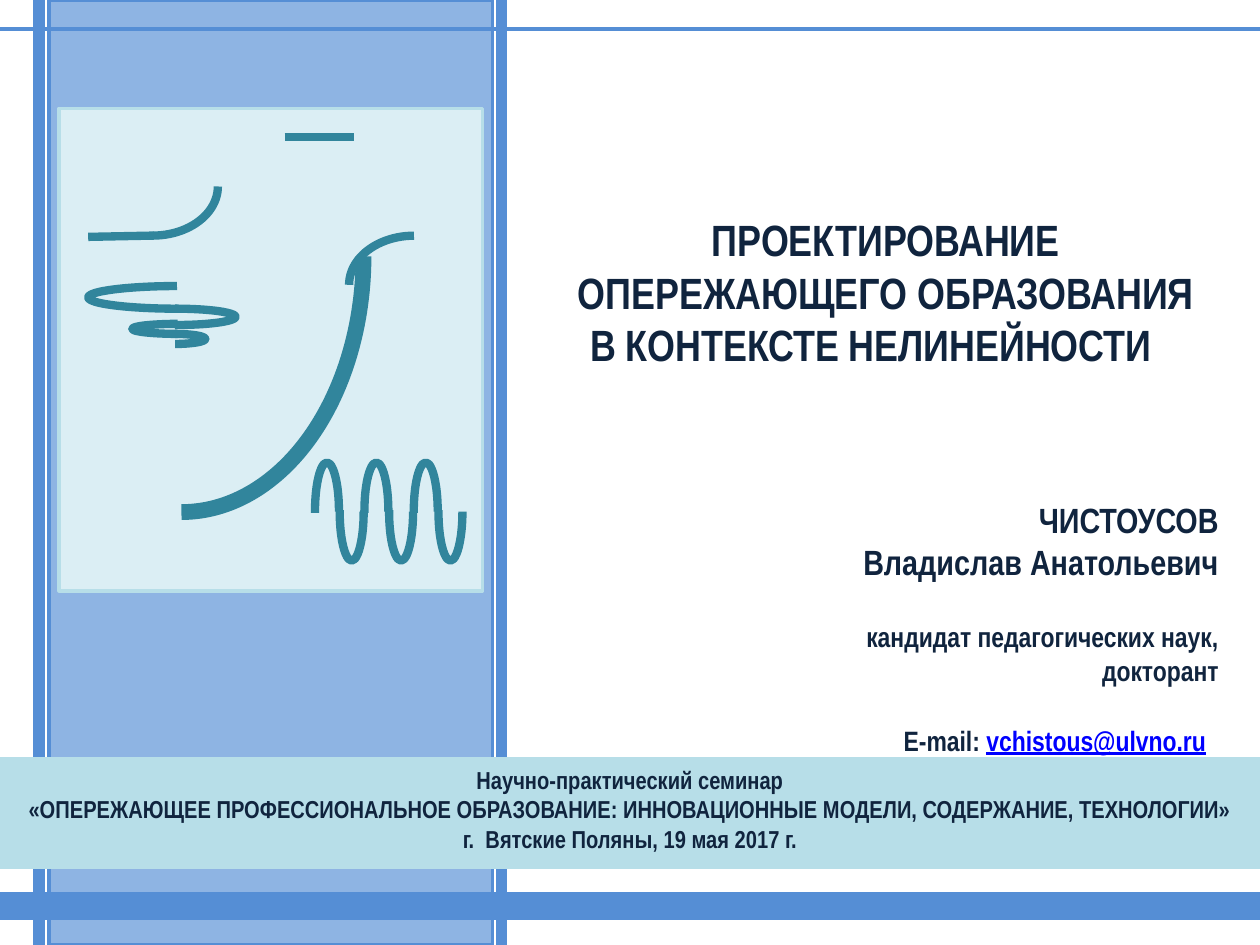
from lxml.etree import SubElement
from pptx import Presentation
from pptx.dml.color import RGBColor
from pptx.enum.shapes import MSO_CONNECTOR as Connector, MSO_SHAPE as Shape
from pptx.enum.text import MSO_ANCHOR as Anchor, PP_ALIGN as Align
from pptx.oxml.ns import qn
from pptx.util import Inches, Pt

BLUE = RGBColor(0x55, 0x8E, 0xD5)
LIGHT_BLUE = RGBColor(0x8E, 0xB4, 0xE3)
AQUA = RGBColor(0xB7, 0xDE, 0xE8)
PALE_AQUA = RGBColor(0xDB, 0xEE, 0xF4)
TEAL = RGBColor(0x31, 0x85, 0x9C)
NAVY = RGBColor(0x10, 0x24, 0x3E)
LINK_BLUE = RGBColor(0x00, 0x00, 0xFF)
FONT = "Arial Narrow"
STROKE = 4.75
QUARTER, HALF, WAVE = (162, 0), (162, 54.81), (104.091, 0)


def add_panel(page, left, top, width, height, fill, line, weight=2):
    """Add a filled rectangle with an outline."""
    panel = page.shapes.add_shape(Shape.RECTANGLE, Inches(left), Inches(top),
                                  Inches(width), Inches(height))
    panel.shadow.inherit = False
    panel.fill.solid()
    panel.fill.fore_color.rgb = fill
    panel.line.color.rgb = line
    panel.line.width = Pt(weight)
    return panel


def add_line(page, start, end, color, weight):
    """Add a straight line between two points."""
    (x1, y1), (x2, y2) = start, end
    line = page.shapes.add_connector(Connector.STRAIGHT, Inches(x1), Inches(y1),
                                     Inches(x2), Inches(y2))
    line.line.color.rgb = color
    line.line.width = Pt(weight)
    SubElement(line._element.spPr, qn("a:effectLst"))


def add_arc(page, left, top, width, height, angles, flip=None, rotation=0, weight=STROKE):
    """Add an open arc, optionally flipped or rotated."""
    arc = page.shapes.add_shape(Shape.ARC, Inches(left), Inches(top),
                                Inches(width), Inches(height))
    arc.shadow.inherit = False
    arc.fill.background()
    arc.line.color.rgb = TEAL
    arc.line.width = Pt(weight)
    arc.adjustments[0], arc.adjustments[1] = angles
    arc.rotation = rotation
    if flip:
        arc._element.spPr.xfrm.set(f"flip{flip}", "1")


def add_box(page, left, top, width, height):
    """Add an empty text box."""
    return page.shapes.add_textbox(Inches(left), Inches(top), Inches(width), Inches(height))


def write(box, text, size=14, align=Align.CENTER, color=NAVY, before=0,
          right_margin=0, underline=None, same_line=False):
    """Append text to a shape as a new paragraph or as a span of the last one."""
    frame = box.text_frame
    frame.word_wrap = True
    frame.vertical_anchor = Anchor.TOP
    para = frame.paragraphs[-1]
    if not same_line:
        if para.runs:
            para = frame.add_paragraph()
        para.alignment = align
        para.space_before = Pt(before)
        if right_margin:
            para._p.get_or_add_pPr().set("marR", str(Inches(right_margin)))
    span = para.add_run()
    span.text = text
    span.font.name = FONT
    span.font.size = Pt(size)
    span.font.bold = True
    span.font.underline = underline
    span.font.color.rgb = color


def add_frame(page):
    """Draw the side column and the lines that frame the page."""
    add_panel(page, 0.39, 0, 3.52, 7.5, LIGHT_BLUE, BLUE)
    for x in (3.98, 0.31):
        add_line(page, (x, 0), (x, 7.5), BLUE, 6.5)
    for y, weight in ((7.19, 16.25), (0.23, 2.25)):
        add_line(page, (0, y), (10, y), BLUE, weight)


def add_author(page):
    """Write the author's name, degree and address."""
    box = add_box(page, 5.86, 3.91, 3.91, 1.83)
    write(box, "ЧИСТОУСОВ", size=20, align=Align.RIGHT)
    write(box, "Владислав Анатольевич", size=20, align=Align.RIGHT)
    write(box, "кандидат педагогических наук, докторант", size=16,
          align=Align.RIGHT, before=21)
    write(box, "E-mail: ", size=16, align=Align.RIGHT, before=21, right_margin=0.1)
    write(box, "vchistous@ulvno.ru", size=16, color=LINK_BLUE, underline=True, same_line=True)


def add_title(page):
    """Write the title of the talk."""
    box = add_box(page, 4.22, 1.64, 5.62, 1.35)
    write(box, "ПРОЕКТИРОВАНИЕ ОПЕРЕЖАЮЩЕГО ОБРАЗОВАНИЯ", size=25)
    write(box, "В КОНТЕКСТЕ НЕЛИНЕЙНОСТИ", size=25, right_margin=0.24)


def add_seminar(page):
    """Draw the band that names the seminar."""
    add_panel(page, 0, 6.02, 10, 0.86, AQUA, AQUA)
    band = add_panel(page, 0, 6.02, 10, 0.8, AQUA, AQUA, 0.75)
    for text in ("Научно-практический семинар",
                 "«ОПЕРЕЖАЮЩЕЕ ПРОФЕССИОНАЛЬНОЕ ОБРАЗОВАНИЕ: "
                 "ИННОВАЦИОННЫЕ МОДЕЛИ, СОДЕРЖАНИЕ, ТЕХНОЛОГИИ»",
                 "г.  Вятские Поляны, 19 мая 2017 г."):
        write(band, text)


def add_emblem(page):
    """Draw the panel of curves: growth, wave, steps and spiral."""
    add_panel(page, 0.47, 0.86, 3.36, 3.83, PALE_AQUA, AQUA)
    add_arc(page, -0.59, 0.59, 4.06, 2.89, QUARTER, rotation=90, weight=9)
    for index in range(6):
        add_arc(page, 2.5 + 0.196 * index, 3.67, 0.19, 0.78, WAVE,
                flip="V" if index % 2 else None)
    add_arc(page, 0.7, 1.09, 1.03, 0.78, QUARTER, flip="V")
    add_arc(page, 2.77, 1.87, 1.03, 0.78, QUARTER, flip="V", rotation=180)
    add_line(page, (0.7, 1.88), (1.22, 1.87), TEAL, STROKE)
    add_line(page, (2.26, 1.09), (2.81, 1.09), TEAL, STROKE)
    for left, top, width, height, flip in ((1.05, 2.57, 0.72, 0.08, "H"),
                                           (1.15, 2.65, 0.48, 0.08, None),
                                           (0.91, 2.45, 0.96, 0.13, None),
                                           (0.7, 2.27, 1.41, 0.18, "H")):
        add_arc(page, left, top, width, height, HALF, flip=flip)


def main():
    """Build the title slide and save it."""
    deck = Presentation()
    deck.slide_width, deck.slide_height = Inches(10), Inches(7.5)
    page = deck.slides.add_slide(deck.slide_layouts[6])
    add_frame(page)
    add_author(page)
    add_title(page)
    add_seminar(page)
    add_emblem(page)
    deck.save("out.pptx")


if __name__ == "__main__":
    main()
